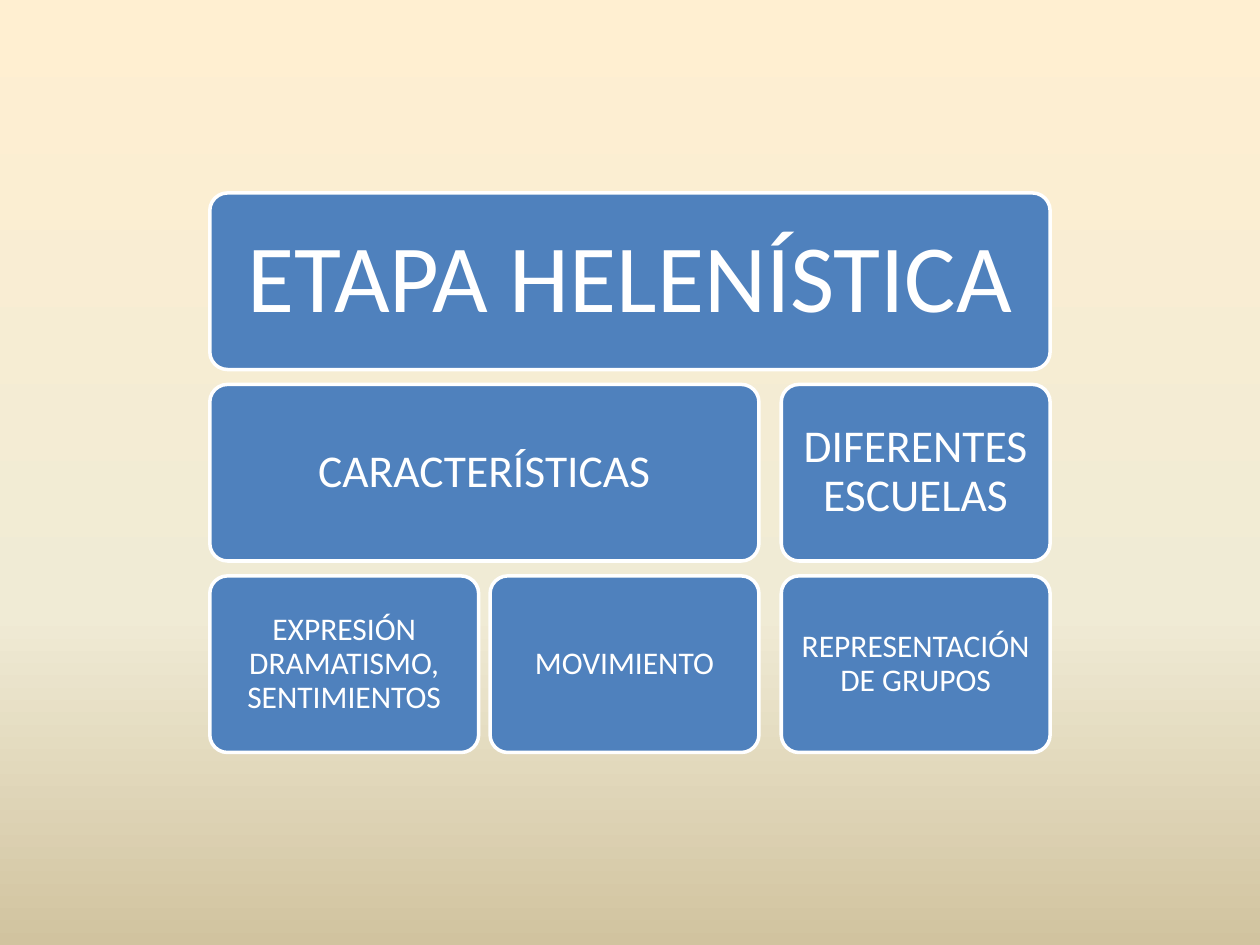
import pptx
import pptx.dml.color
import pptx.enum.shapes
import pptx.enum.text
import pptx.util
from pptx.util import Cm

BLUE = pptx.dml.color.RGBColor(0x4F, 0x81, 0xBD)
WHITE = pptx.dml.color.RGBColor(0xFF, 0xFF, 0xFF)
CREAM = pptx.dml.color.RGBColor(0xFF, 0xEF, 0xD1)
IVORY = pptx.dml.color.RGBColor(0xF0, 0xEB, 0xD5)
SAND = pptx.dml.color.RGBColor(0xD1, 0xC3, 0x9F)
BACKGROUND_STOPS = [(0, CREAM), (65, IVORY), (100, SAND)]

FONT = "Calibri"
COLUMN_LEFTS = [4.23, 9.88, 15.75]
COLUMN_WIDTH = 5.42
FIRST_ROW_TOP = 3.89
ROW_HEIGHT = 3.56
ROW_PITCH = 3.86

# Font size in points and text margin in centimetres, for each row
ROW_STYLES = [(55, 0.48), (26, 0.18), (18, 0.08)]
# Text, row, first column, last column
BOXES = [
    ("ETAPA HELENÍSTICA", 0, 0, 2),
    ("CARACTERÍSTICAS", 1, 0, 1),
    ("EXPRESIÓN DRAMATISMO, SENTIMIENTOS", 2, 0, 0),
    ("MOVIMIENTO", 2, 1, 1),
    ("DIFERENTES ESCUELAS", 1, 2, 2),
    ("REPRESENTACIÓN DE GRUPOS", 2, 2, 2),
]


def set_background(slide):
    """Fill the background with a three-stop gradient from top to bottom."""
    fill = slide.background.fill
    fill.gradient()
    fill.gradient_angle = 270
    stop_list = fill.gradient_stops[0]._gs.getparent()
    for stop in list(stop_list):
        stop_list.remove(stop)
    for percent, color in BACKGROUND_STOPS:
        stop = pptx.oxml.parse_xml(
            '<a:gs xmlns:a="http://schemas.openxmlformats.org/drawingml/2006/main"'
            f' pos="{percent * 1000}"><a:srgbClr val="{color}"/></a:gs>'
        )
        stop_list.append(stop)


def add_box(slide, text, row, first_column, last_column):
    left = COLUMN_LEFTS[first_column]
    width = COLUMN_LEFTS[last_column] + COLUMN_WIDTH - left
    shape = slide.shapes.add_shape(
        pptx.enum.shapes.MSO_SHAPE.ROUNDED_RECTANGLE,
        Cm(left), Cm(FIRST_ROW_TOP + row * ROW_PITCH), Cm(width), Cm(ROW_HEIGHT),
    )
    shape.adjustments[0] = 0.1
    shape.shadow.inherit = False
    shape.fill.solid()
    shape.fill.fore_color.rgb = BLUE
    shape.line.color.rgb = WHITE
    shape.line.width = pptx.util.Pt(2)
    write_text(shape.text_frame, text, *ROW_STYLES[row])


def write_text(text_frame, text, size, margin):
    text_frame.word_wrap = True
    text_frame.vertical_anchor = pptx.enum.text.MSO_ANCHOR.MIDDLE
    text_frame.margin_left = text_frame.margin_right = Cm(margin)
    text_frame.margin_top = text_frame.margin_bottom = Cm(margin)
    paragraph = text_frame.paragraphs[0]
    paragraph.alignment = pptx.enum.text.PP_ALIGN.CENTER
    paragraph.line_spacing = 0.9
    run = paragraph.add_run()
    run.text = text
    run.font.name = FONT
    run.font.size = pptx.util.Pt(size)
    run.font.color.rgb = WHITE


def main():
    presentation = pptx.Presentation()
    presentation.slide_width = Cm(25.4)
    presentation.slide_height = Cm(19.05)
    blank_layout = presentation.slide_layouts.get_by_name("Blank")
    slide = presentation.slides.add_slide(blank_layout)
    set_background(slide)
    for box in BOXES:
        add_box(slide, *box)
    presentation.save("out.pptx")


if __name__ == "__main__":
    main()
